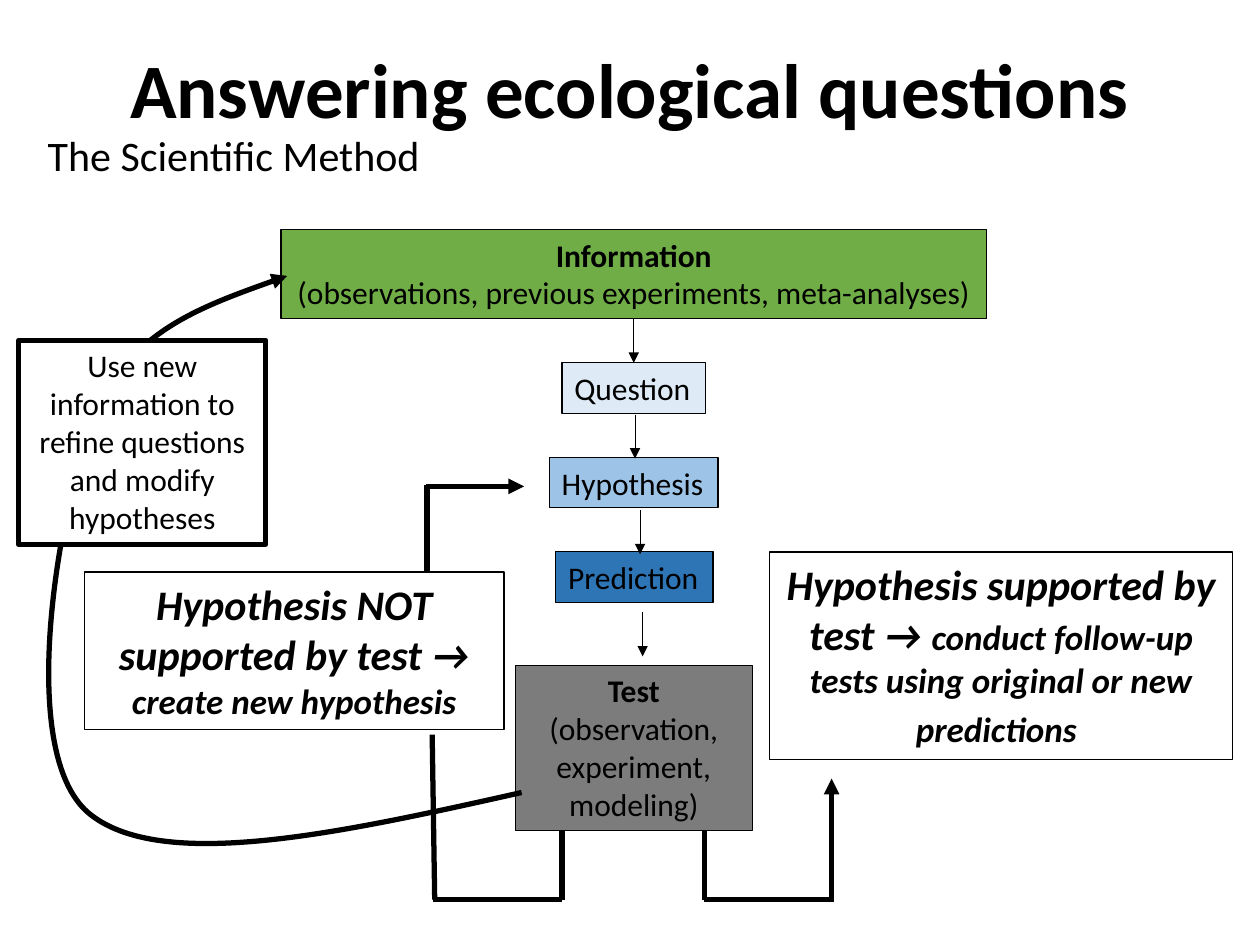
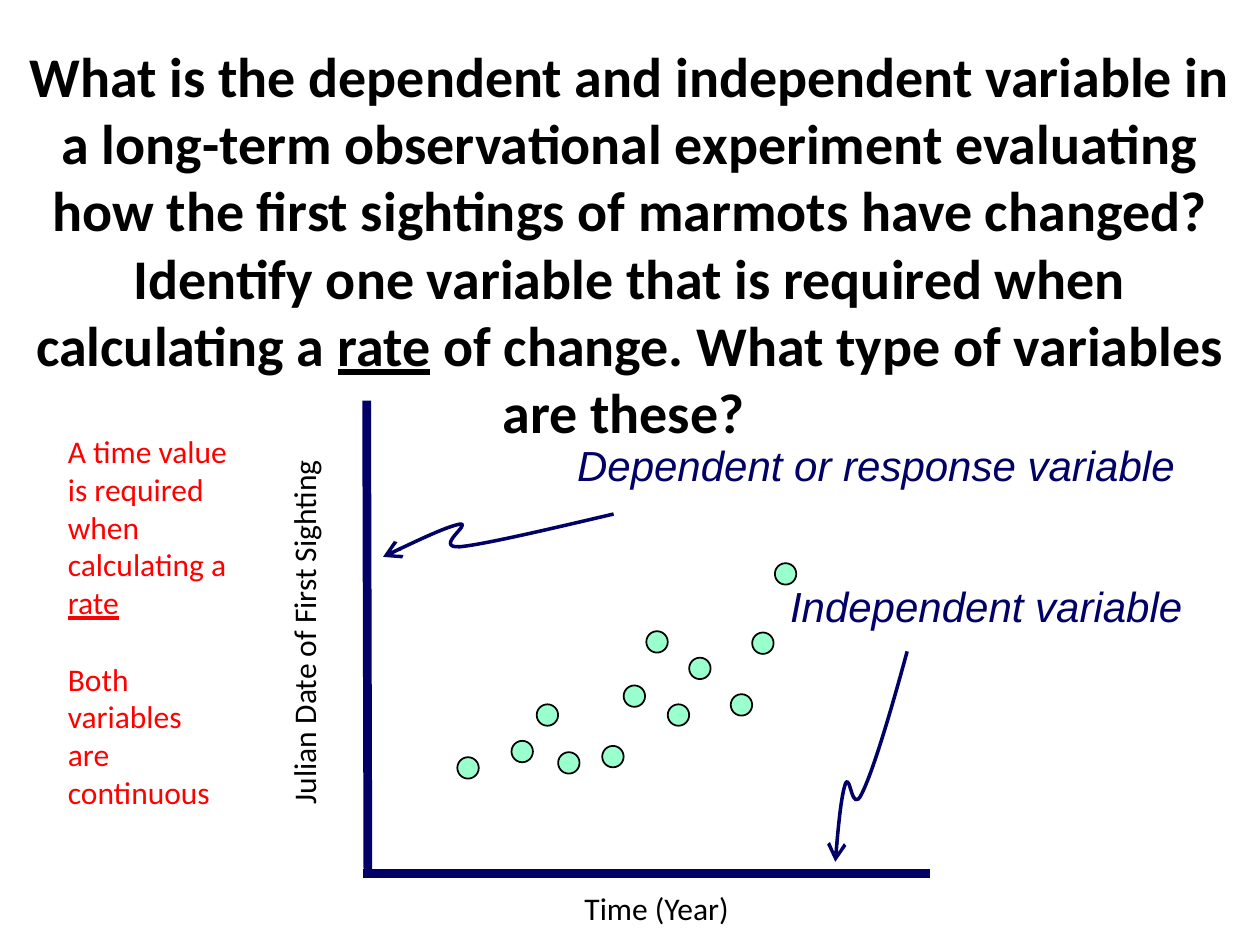
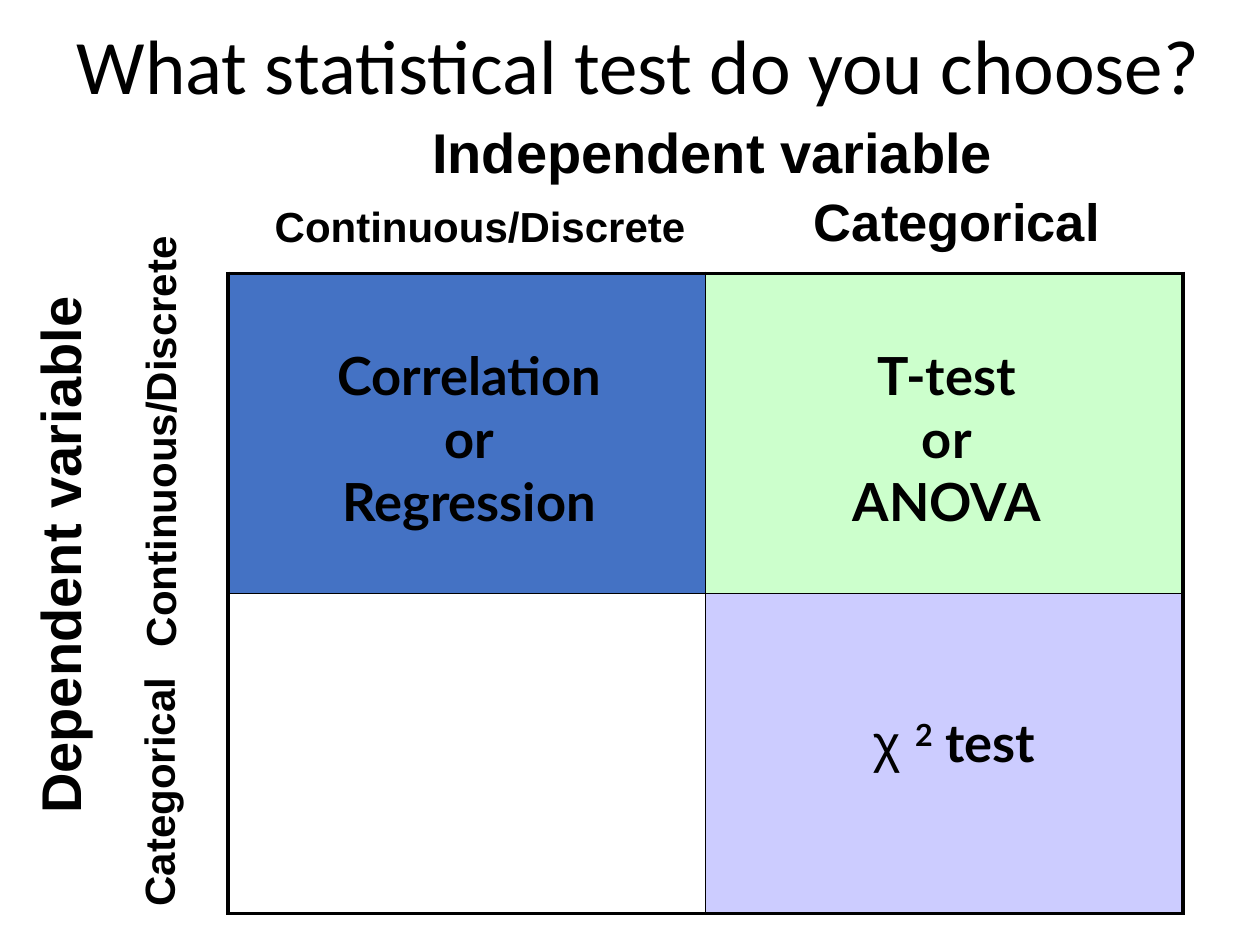
from lxml import etree
from pptx import Presentation
from pptx.dml.color import RGBColor
from pptx.enum.shapes import MSO_CONNECTOR, MSO_SHAPE
from pptx.enum.text import MSO_ANCHOR, MSO_AUTO_SIZE, PP_ALIGN
from pptx.oxml.ns import qn
from pptx.util import Inches, Pt

RECT, OVAL = MSO_SHAPE.RECTANGLE, MSO_SHAPE.OVAL
STRAIGHT = MSO_CONNECTOR.STRAIGHT
TOP = MSO_ANCHOR.TOP
GROW, FIXED = MSO_AUTO_SIZE.SHAPE_TO_FIT_TEXT, MSO_AUTO_SIZE.NONE
LEFT, CENTER = PP_ALIGN.LEFT, PP_ALIGN.CENTER

COLORS = {
    "black": "000000", "white": "FFFFFF", "navy": "000066", "red": "FF0000",
    "information": "70AD47", "question": "DEEBF7", "hypothesis": "9DC3E6",
    "prediction": "2E75B6", "test": "7C7C7C", "dot": "99FFCC",
    "regression": "4472C4", "anova": "CCFFCC", "chi": "CCCCFF",
}
BODY = {"font": "Calibri", "size": 18, "color": "black"}
TITLE = BODY | {"size": 44}
OUTCOME = BODY | {"size": 24, "bold": True, "italic": True}
VARIABLE = {"font": "Arial", "size": 24, "color": "navy", "italic": True}
HEADING = {"font": "Arial", "size": 24, "color": "black", "bold": True}
CELL = {"font": "Lato", "size": 30, "color": "black", "bold": True}
DEFAULT_INSETS = (0.1, 0.05, 0.1, 0.05)
LABEL_INSETS = (0.04, 0, 0.04, 0)


def rgb(name):
    return RGBColor.from_string(COLORS[name])


def inches(values):
    return [Inches(v) for v in values]


def add_run(p, text, style):
    r = p.add_run()
    r.text = text
    font = r.font
    font.name, font.size = style["font"], Pt(style["size"])
    font.bold = style.get("bold", False)
    font.italic = style.get("italic", False)
    font.underline = style.get("underline", False)
    font.color.rgb = rgb(style["color"])
    if "baseline" in style:
        r._r.get_or_add_rPr().set("baseline", str(style["baseline"]))


def write(tf, paragraphs, style, align=LEFT, gap=0):
    for i, runs in enumerate(paragraphs):
        p = tf.add_paragraph() if i else tf.paragraphs[0]
        p.alignment = align
        if i and gap:
            p.space_before = Pt(gap)
        for text, changes in runs:
            add_run(p, text, style | changes)


def fill_text(sp, paragraphs, style, align=LEFT, wrap=True, size=GROW,
              insets=DEFAULT_INSETS, gap=0):
    tf = sp.text_frame
    tf.word_wrap, tf.auto_size, tf.vertical_anchor = wrap, size, TOP
    (tf.margin_left, tf.margin_top,
     tf.margin_right, tf.margin_bottom) = inches(insets)
    write(tf, paragraphs, style, align, gap)


def add_text(slide, box, paragraphs, style, rotation=0, **layout):
    sp = slide.shapes.add_textbox(*inches(box))
    sp.rotation = rotation
    fill_text(sp, paragraphs, style, **layout)
    return sp


def add_label(slide, box, text, style, **layout):
    add_text(slide, box, [[(text, {})]], style, insets=LABEL_INSETS, **layout)


def add_side_label(slide, box, text, style):
    left, top, width, height = inches(box)
    right, bottom = left + width, top + height
    builder = slide.shapes.build_freeform(left, top)
    builder.add_line_segments([(right, top), (right, bottom), (left, bottom)])
    sp = builder.convert_to_shape()
    sp.shadow.inherit = False
    sp.fill.background()
    sp.line.fill.background()
    sp.rotation = 270
    fill_text(sp, [[(text, {})]], style, size=FIXED, insets=LABEL_INSETS)


def add_title(slide, box, paragraphs, **changes):
    add_text(slide, box, paragraphs, TITLE | {"bold": True} | changes, align=CENTER)


def set_line(line, color, width):
    line.color.rgb = rgb(color)
    line.width = Pt(width)


def add_shape(slide, kind, box, fill, width):
    sp = slide.shapes.add_shape(kind, *inches(box))
    sp.shadow.inherit = False
    sp.fill.solid()
    sp.fill.fore_color.rgb = rgb(fill)
    set_line(sp.line, "black", width)
    return sp


def add_box(slide, box, fill, paragraphs, style=BODY, width=0.75, **layout):
    fill_text(add_shape(slide, RECT, box, fill, width), paragraphs, style, **layout)


def add_arrowhead(sp, head, size="med"):
    etree.SubElement(sp.line._get_or_add_ln(), qn("a:tailEnd"),
                     type=head, w=size, len=size)


def add_line(slide, start, end, color="black", width=3, head=None):
    cxn = slide.shapes.add_connector(STRAIGHT, *inches(start + end))
    set_line(cxn.line, color, width)
    etree.SubElement(cxn._element.spPr, qn("a:effectLst"))
    if head:
        add_arrowhead(cxn, head)


def add_curve(slide, points, color, width, head, head_size="med"):
    start, *rest = [tuple(inches(point)) for point in points]
    builder = slide.shapes.build_freeform(*start)
    builder.add_line_segments(rest, close=False)
    sp = builder.convert_to_shape()
    sp.shadow.inherit = False
    sp.fill.background()
    set_line(sp.line, color, width)
    add_arrowhead(sp, head, head_size)
    outline = sp._element.find(".//" + qn("a:path"))
    segments = outline.findall(qn("a:lnTo"))
    for i in range(0, len(segments), 3):
        curve = etree.SubElement(outline, qn("a:cubicBezTo"))
        for segment in segments[i:i + 3]:
            curve.append(segment[0])
            outline.remove(segment)


def set_borders(cell, widths):
    tc_pr = cell._tc.get_or_add_tcPr()
    for i, (side, width) in enumerate(zip("LRTB", widths)):
        ln = etree.Element(qn("a:ln" + side), w=str(Pt(width)))
        solid = etree.SubElement(ln, qn("a:solidFill"))
        etree.SubElement(solid, qn("a:srgbClr"), val=COLORS["black"])
        tc_pr.insert(i, ln)


def fill_cell(cell, fill, lines, top):
    cell.margin_left, cell.margin_right = Inches(0.1), Inches(0.06)
    cell.margin_top, cell.margin_bottom = Inches(top), Inches(0.06)
    cell.vertical_anchor = TOP
    if fill:
        cell.fill.solid()
        cell.fill.fore_color.rgb = rgb(fill)
    else:
        cell.fill.background()
    p = cell.text_frame.paragraphs[0]
    p.alignment = CENTER
    for i, runs in enumerate(lines):
        if i:
            p.add_line_break()
        for text, changes in runs:
            add_run(p, text, CELL | changes)


def build_method(slide):
    add_title(slide, (0, 0.28, 10, 0.84), [[("Answering ecological questions", {})]])
    add_text(slide, (0.28, 0.98, 3.19, 0.5), [[("The Scientific Method", {})]],
             BODY | {"size": 24}, wrap=False)

    add_box(slide, (2.23, 1.82, 5.6, 0.71), "information",
            [[("Information", {"bold": True})],
             [("(observations, previous experiments, meta-analyses)", {})]],
            align=CENTER, wrap=False)
    steps = [("Question", 4.46, 1.14), ("Hypothesis", 4.36, 1.34),
             ("Prediction", 4.41, 1.25)]
    for i, (step, left, width) in enumerate(steps):
        add_box(slide, (left, 2.88 + 0.75 * i, width, 0.4), step.lower(),
                [[(step, {})]], wrap=False)
    add_box(slide, (4.09, 5.28, 1.88, 1.31), "test",
            [[("Test", {"bold": True})],
             [("(observation, experiment, modeling)", {})]], align=CENTER)
    add_box(slide, (6.11, 4.38, 3.67, 1.65), "white",
            [[("Hypothesis supported by test → ", {}),
              ("conduct follow-up tests using original or new predictions",
               {"size": 20}),
              (" ", {})]], OUTCOME, align=CENTER)

    add_curve(slide, [(4.14, 6.29), (2.71, 6.61), (1.27, 6.93), (0.7, 6.45),
                      (0.13, 5.96), (0.46, 4.07), (0.73, 3.36),
                      (0.99, 2.65), (1.63, 2.42), (2.28, 2.19)],
              "black", 3, "triangle")
    add_box(slide, (0.15, 2.7, 1.96, 1.62), "white",
            [[("Use new information to refine questions and modify hypotheses", {})]],
            width=3, align=CENTER)

    for x, y in [(5.03, 2.53), (5.04, 3.29), (5.08, 4.05), (5.1, 4.86)]:
        add_line(slide, (x, y), (x, y + 0.35), width=0.5, head="triangle")
    for start, end in [((4.46, 6.59), (4.46, 7.14)), ((5.59, 6.59), (5.59, 7.14)),
                       ((4.46, 7.14), (3.44, 7.14)), ((6.61, 7.14), (5.59, 7.14)),
                       ((3.43, 5.83), (3.45, 7.14)), ((3.39, 3.85), (3.39, 4.56))]:
        add_line(slide, start, end)
    add_line(slide, (3.38, 3.86), (4.16, 3.86), head="triangle")
    add_line(slide, (6.6, 7.16), (6.6, 6.18), head="triangle")

    add_box(slide, (0.67, 4.54, 3.33, 1.25), "white",
            [[("Hypothesis NOT supported by test → ", {}),
              ("create new hypothesis", {"size": 20})]], OUTCOME, align=CENTER)


def build_marmots(slide):
    add_title(slide, (0, 0.28, 10, 3.33),
              [[("What is the dependent and independent variable in a long-term "
                 "observational experiment evaluating how the first sightings of "
                 "marmots have changed?", {})],
               [("Identify one variable that is required when calculating a ", {}),
                ("rate", {"underline": True}),
                (" of change. What type of variables are these? ", {})]], size=32)

    add_line(slide, (2.91, 3.18), (2.92, 6.93), "navy", 5)
    add_line(slide, (2.88, 6.93), (7.38, 6.93), "navy", 5)
    sightings = [(3.63, 6.01), (4.26, 5.59), (5.3, 5.59), (4.43, 5.97),
                 (4.06, 5.88), (6.15, 4.47), (5.8, 5.51), (4.95, 5.44),
                 (5.13, 5.01), (5.97, 5.02), (5.47, 5.22), (4.78, 5.92)]
    for x, y in sightings:
        add_shape(slide, OVAL, (x, y, 0.17, 0.17), "dot", 1)
    add_text(slide, (4.54, 7.01, 1.36, 0.4), [[("Time (Year)", {})]], BODY, wrap=False)
    add_text(slide, (0.93, 4.8, 2.96, 0.4), [[("Julian Date of First Sighting", {})]],
             BODY, rotation=270, wrap=False)

    add_label(slide, (4.54, 3.49, 4.84, 0.4), "Dependent or response variable",
              VARIABLE, wrap=False)
    add_curve(slide, [(4.87, 4.08), (4.36, 4.2), (3.85, 4.32), (3.65, 4.34),
                      (3.44, 4.35), (3.75, 4.15), (3.65, 4.16),
                      (3.55, 4.18), (3.29, 4.3), (3.04, 4.42)],
              "navy", 2, "arrow", "lg")
    add_label(slide, (6.23, 4.61, 3.21, 0.4), "Independent variable",
              VARIABLE, wrap=False)
    add_curve(slide, [(7.2, 5.17), (7.07, 5.65), (6.93, 6.12), (6.84, 6.3),
                      (6.76, 6.47), (6.75, 6.13), (6.71, 6.22),
                      (6.68, 6.31), (6.65, 6.58), (6.63, 6.84)],
              "navy", 2, "arrow", "lg")

    add_text(slide, (0.44, 3.38, 1.48, 3.43),
             [[("A time value is required when calculating a ", {}),
               ("rate", {"underline": True})],
              [("Both variables are continuous", {})]],
             BODY | {"color": "red"}, gap=22)


def build_tests(slide):
    column_labels = [
        ("Categorical", (6.42, 1.5, 2.47, 0.57), 30),
        ("Continuous/Discrete", (2.14, 1.59, 3.58, 0.49), 24),
        ("Independent variable", (3.39, 0.93, 4.66, 0.61), 32),
    ]
    row_labels = [
        ("Continuous/Discrete", (-0.48, 3.14, 3.58, 0.49), 24),
        ("Categorical", (0.27, 5.96, 2.06, 0.49), 24),
        ("Dependent variable", (-1.65, 4.04, 4.31, 0.61), 32),
    ]
    for text, box, size in column_labels:
        add_label(slide, box, text, HEADING | {"size": size}, size=FIXED)
    for text, box, size in row_labels:
        add_side_label(slide, box, text, HEADING | {"size": size})

    frame = slide.shapes.add_table(2, 2, *inches((1.81, 2.17, 7.58, 5.08)))
    table = frame.table
    table.first_row = table.horz_banding = False
    chi_test = [(" χ ", {"font": "Arial", "bold": False}),
                ("2", {"baseline": 30000}), (" test", {})]
    cells = [
        [("regression", [[("Correlation", {})], [("or", {})], [("Regression", {})]], 0.56),
         ("anova", [[("T-test", {})], [("or", {})], [("ANOVA", {})]], 0.56)],
        [(None, [], 0.06), ("chi", [chi_test], 0.93)],
    ]
    outer, inner = 2.25, 1
    for row, contents in enumerate(cells):
        for col, content in enumerate(contents):
            cell = table.cell(row, col)
            fill_cell(cell, *content)
            across = (inner, outer) if col else (outer, inner)
            down = (inner, outer) if row else (outer, inner)
            set_borders(cell, across + down)

    title = add_text(slide, (0.51, 0.09, 9.22, 0.84),
                     [[("What statistical test do you choose?", {})]],
                     TITLE, wrap=False)
    set_line(title.line, "white", 0.75)


def main():
    prs = Presentation()
    prs.slide_width, prs.slide_height = Inches(10), Inches(7.5)
    for build in (build_method, build_marmots, build_tests):
        build(prs.slides.add_slide(prs.slide_layouts[6]))
    prs.save("out.pptx")


if __name__ == "__main__":
    main()
